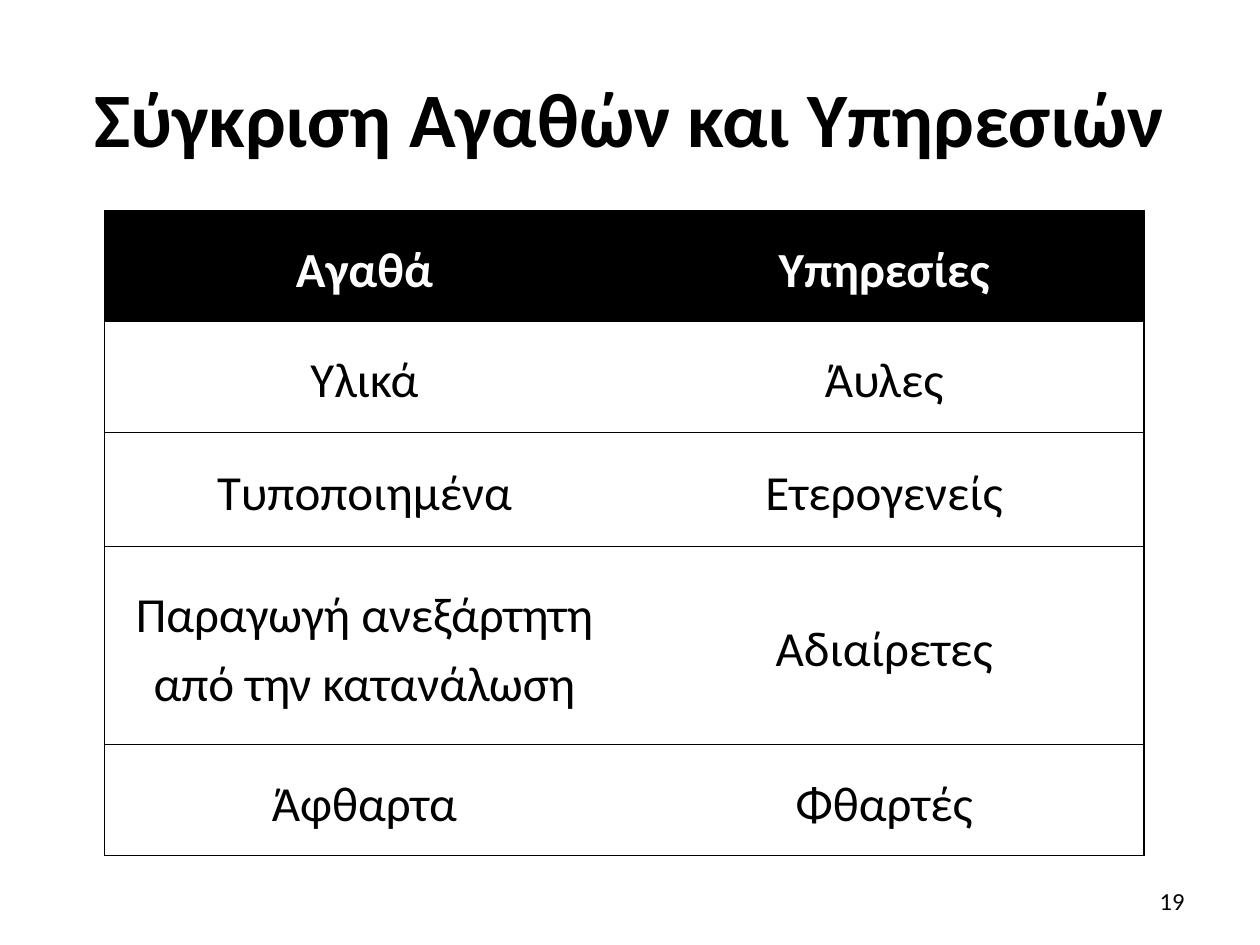
from typing import NamedTuple

from lxml import etree
from pptx import Presentation
from pptx import util as u
from pptx.dml.color import RGBColor
from pptx.enum import text
from pptx.oxml import ns

BLACK, WHITE = "000000", "FFFFFF"
FONT = "Calibri"


class Row(NamedTuple):
    goods: str
    services: str
    height: float
    fill: str = WHITE
    color: str = BLACK
    bold: bool = False


ROWS = [
    Row("Αγαθά", "Υπηρεσίες", 0.88, fill=BLACK, color=WHITE, bold=True),
    Row("Υλικά", "Άυλες", 0.88),
    Row("Τυποποιημένα", "Ετερογενείς", 0.91),
    Row("Παραγωγή ανεξάρτητη από την κατανάλωση", "Αδιαίρετες", 1.57),
    Row("Άφθαρτα", "Φθαρτές", 0.88),
]


def rgb(color: str) -> RGBColor:
    return RGBColor.from_string(color)


def write(frame, words: str, *, size: float, color: str = BLACK, bold: bool = False,
          align=text.PP_ALIGN.CENTER, spacing: float = 1.0) -> None:
    frame.word_wrap = True
    paragraph = frame.paragraphs[0]
    paragraph.alignment = align
    paragraph.line_spacing = spacing
    run = paragraph.add_run()
    run.text = words
    run.font.name = FONT
    run.font.size = u.Pt(size)
    run.font.bold = bold
    run.font.color.rgb = rgb(color)


def set_borders(cell, visible: str) -> None:
    """Draw the sides named by the letters L, R, T, B and hide the others."""
    properties = cell._tc.get_or_add_tcPr()
    for side in "LRTB":
        line = etree.SubElement(properties, ns.qn(f"a:ln{side}"), w=str(u.Pt(0.75)))
        if side in visible:
            fill = etree.SubElement(line, ns.qn("a:solidFill"))
            etree.SubElement(fill, ns.qn("a:srgbClr"), val=BLACK)
        else:
            etree.SubElement(line, ns.qn("a:noFill"))


def add_comparison(slide, rows: list[Row]) -> None:
    total_height = sum(row.height for row in rows)
    table = slide.shapes.add_table(
        len(rows), 2, u.Inches(0.83), u.Inches(1.67), u.Inches(8.25), u.Inches(total_height)
    ).table
    table.first_row = table.horz_banding = False
    for index, row in enumerate(rows):
        table.rows[index].height = u.Inches(row.height)
        for column, (words, sides) in enumerate([(row.goods, "LTB"), (row.services, "RTB")]):
            cell = table.cell(index, column)
            cell.margin_left = cell.margin_right = u.Inches(0.07)
            cell.margin_top = cell.margin_bottom = 0
            cell.vertical_anchor = text.MSO_ANCHOR.MIDDLE
            set_borders(cell, sides)
            cell.fill.solid()
            cell.fill.fore_color.rgb = rgb(row.fill)
            write(cell.text_frame, words, size=28, color=row.color, bold=row.bold, spacing=1.15)


def main() -> None:
    presentation = Presentation()
    presentation.slide_width, presentation.slide_height = u.Inches(10), u.Inches(7.5)
    slide = presentation.slides.add_slide(presentation.slide_layouts[5])

    title = slide.shapes.title
    title.left, title.top = u.Inches(0.5), u.Inches(0.3)
    title.width, title.height = u.Inches(9), u.Inches(1.25)
    title.text_frame.vertical_anchor = text.MSO_ANCHOR.MIDDLE
    write(title.text_frame, "Σύγκριση Αγαθών και Υπηρεσιών", size=44, bold=True)

    add_comparison(slide, ROWS)

    number = slide.shapes.add_textbox(u.Inches(7.17), u.Inches(6.95), u.Inches(2.33), u.Inches(0.4))
    number.text_frame.vertical_anchor = text.MSO_ANCHOR.MIDDLE
    write(number.text_frame, "19", size=14, align=text.PP_ALIGN.RIGHT)

    presentation.save("out.pptx")


if __name__ == "__main__":
    main()
